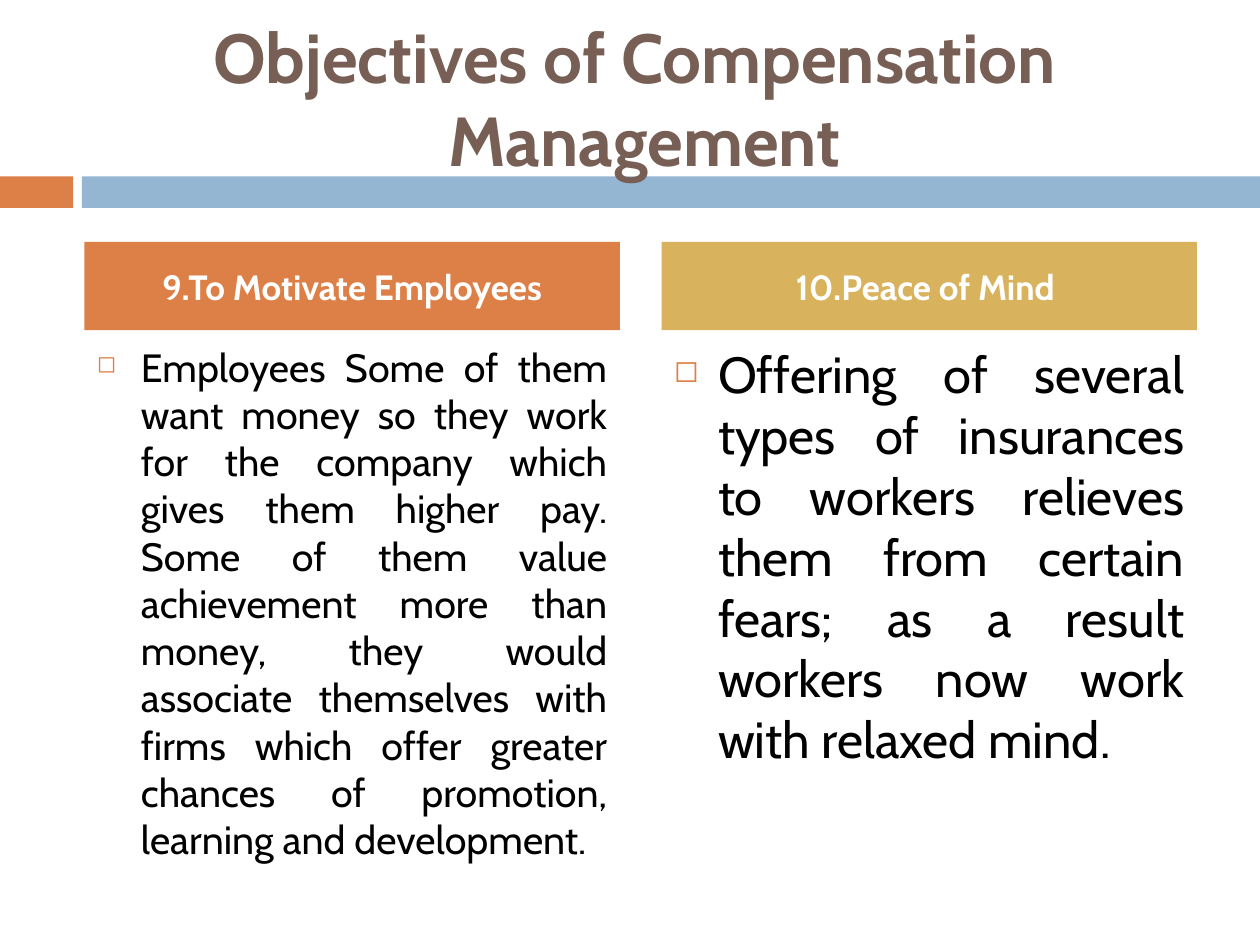
from dataclasses import dataclass

from lxml.etree import SubElement
from pptx import Presentation
from pptx.dml.color import RGBColor
from pptx.enum.shapes import MSO_SHAPE as Shape
from pptx.enum.text import MSO_ANCHOR as Anchor, PP_ALIGN as Align
from pptx.oxml.ns import qn
from pptx.util import Inches, Pt

COLORS = {
    "orange": "DD8047",
    "blue": "94B6D2",
    "gold": "D8B25C",
    "brown": "775F55",
    "black": "000000",
    "white": "FFFFFF",
}
FONT = "Cabin"
COLUMN_LEFT, COLUMN_STEP, COLUMN_WIDTH = 0.67, 4.58, 4.25
HEADING_TOP, HEADING_HEIGHT = 1.92, 0.7
BODY_TOP, BODY_HEIGHT = 2.67, 3.92
BULLET_INDENT = 0.35


@dataclass
class Objective:
    heading: str
    color: str
    body: str
    body_size: float


OBJECTIVES = [
    Objective(
        "9.To Motivate Employees", "orange",
        "Employees Some of them want money so they work for the company which "
        "gives them higher pay. Some of them value achievement more than money, "
        "they would associate themselves with firms which offer greater chances "
        "of promotion, learning and development.",
        22.5,
    ),
    Objective(
        "10.Peace of Mind ", "gold",
        "Offering of several types of insurances to workers relieves them from "
        "certain fears; as a result workers now work with relaxed mind.",
        29,
    ),
]


def rgb(color: str) -> RGBColor:
    return RGBColor.from_string(COLORS[color])


def add_bar(slide, left: float, top: float, width: float, height: float, color: str):
    bar = slide.shapes.add_shape(
        Shape.RECTANGLE, Inches(left), Inches(top), Inches(width), Inches(height))
    bar.shadow.inherit = False
    bar.fill.solid()
    bar.fill.fore_color.rgb = rgb(color)
    bar.line.fill.background()
    return bar


def add_text_box(slide, left: float, top: float, width: float, height: float):
    return slide.shapes.add_textbox(
        Inches(left), Inches(top), Inches(width), Inches(height))


def add_bullet(paragraph, color: str) -> None:
    """Give the paragraph a hanging square bullet; call before setting its font."""
    properties = paragraph._p.get_or_add_pPr()
    properties.set("marL", str(Inches(BULLET_INDENT)))
    properties.set("indent", str(-Inches(BULLET_INDENT)))
    bullet_color = SubElement(properties, qn("a:buClr"))
    SubElement(bullet_color, qn("a:srgbClr"), val=COLORS[color])
    SubElement(properties, qn("a:buSzPct"), val="60000")
    SubElement(properties, qn("a:buChar"), char="◻")


def write(shape, text: str, size: float, color: str, align: Align,
          anchor: Anchor = Anchor.MIDDLE, bold: bool = False,
          space_before: float = 0, bullet: str = ""):
    frame = shape.text_frame
    frame.word_wrap = True
    frame.vertical_anchor = anchor
    paragraph = frame.paragraphs[0]
    paragraph.text = text
    paragraph.alignment = align
    paragraph.space_before = Pt(space_before)
    if bullet:
        add_bullet(paragraph, bullet)
    font = paragraph.font
    font.name, font.size, font.bold = FONT, Pt(size), bold
    font.color.rgb = rgb(color)
    return paragraph


def add_objective(slide, objective: Objective, left: float) -> None:
    body = add_text_box(slide, left, BODY_TOP, COLUMN_WIDTH, BODY_HEIGHT)
    write(body, objective.body, objective.body_size, "black", Align.JUSTIFY,
          anchor=Anchor.TOP, space_before=7, bullet="orange")
    heading = add_bar(slide, left, HEADING_TOP, COLUMN_WIDTH, HEADING_HEIGHT,
                      objective.color)
    write(heading, objective.heading, 20, "white", Align.CENTER,
          bold=True, space_before=7)


def main() -> None:
    deck = Presentation()
    deck.slide_width, deck.slide_height = Inches(10), Inches(7.5)
    slide = deck.slides.add_slide(deck.slide_layouts[6])

    add_bar(slide, 0, 1.4, 0.58, 0.25, "orange")
    add_bar(slide, 0.65, 1.4, 9.35, 0.25, "blue")

    title = add_text_box(slide, 0.58, 0.3, 8.92, 0.95)
    title_line = write(title, "Objectives of Compensation Management ", 39.6,
                       "brown", Align.CENTER, bold=True)
    title_line._p.get_or_add_pPr().set("rtl", "1")

    for column, objective in enumerate(OBJECTIVES):
        add_objective(slide, objective, COLUMN_LEFT + column * COLUMN_STEP)

    deck.save("out.pptx")


if __name__ == "__main__":
    main()
